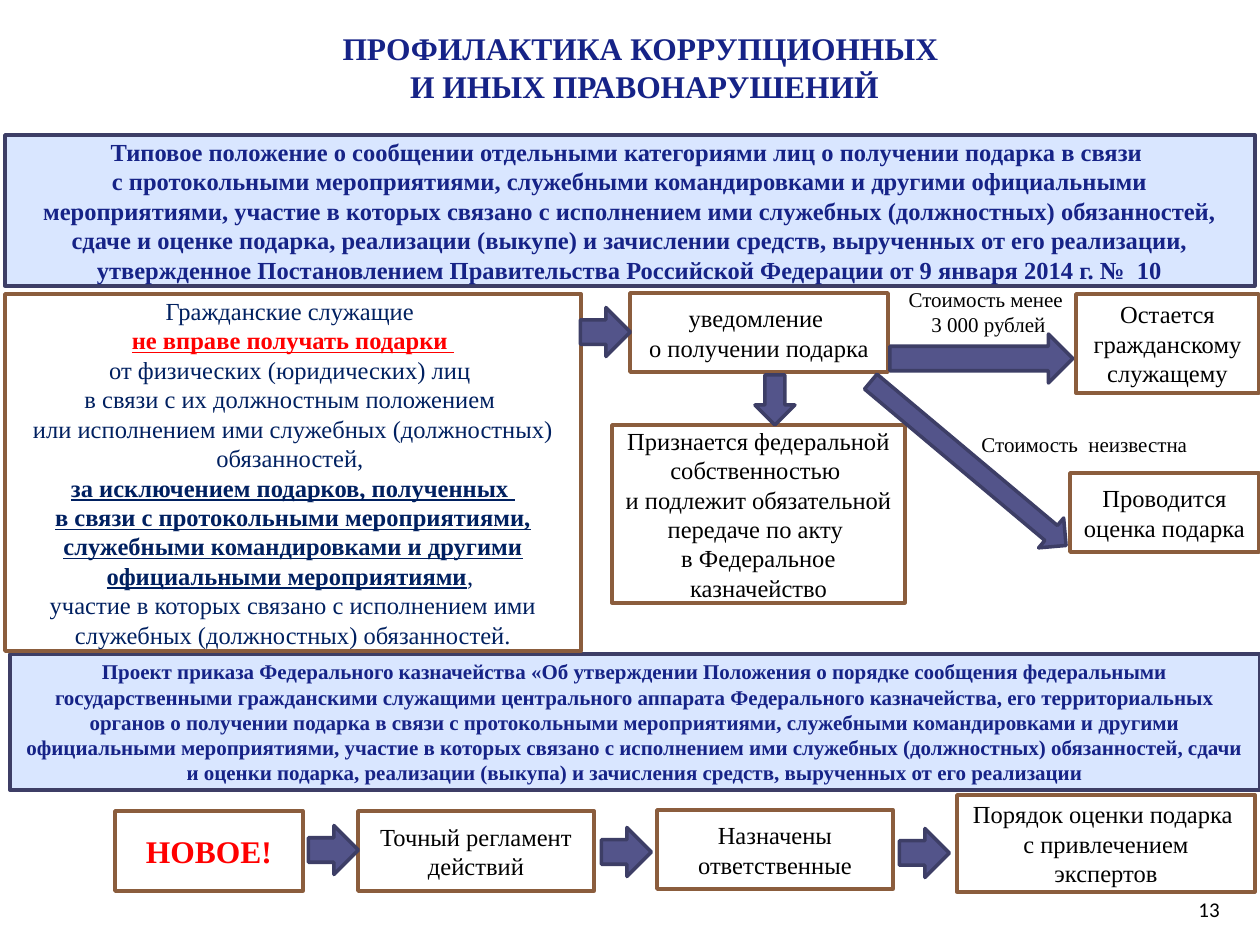
from pptx import Presentation
from pptx import util as u
from pptx.dml.color import RGBColor
from pptx.enum import shapes, text

PX = 914400 / 126
COLORS = {
    "navy": "162387", "dark blue": "002060", "red": "FF0000", "black": "000000",
    "pale blue": "D9E6FF", "white": "FFFFFF", "brown": "8B5D3D",
    "arrow": "53548A", "arrow edge": "3D3E66",
}


def write(shape, wording, size, color, bold=False, align="CENTER", font="Times New Roman"):
    """Fill the shape with one paragraph; line breaks in the wording stay inside it."""
    shape.text_frame.word_wrap = True
    paragraph = shape.text_frame.paragraphs[0]
    paragraph.text = wording.replace("\n", "\v")
    paragraph.alignment = getattr(text.PP_ALIGN, align)
    paragraph.font.name = font
    paragraph.font.size = u.Pt(size)
    paragraph.font.bold = bold
    paragraph.font.color.rgb = RGBColor.from_string(COLORS[color])
    return paragraph


def add_block(kind, frame, fill, line):
    shape = slide.shapes.add_shape(kind, *[round(n * PX) for n in frame])
    shape.shadow.inherit = False
    shape.fill.solid()
    shape.fill.fore_color.rgb = RGBColor.from_string(COLORS[fill])
    shape.line.color.rgb = RGBColor.from_string(COLORS[line])
    shape.line.width = u.Pt(2)
    return shape


presentation = Presentation()
presentation.slide_width = round(1260 * PX)
presentation.slide_height = round(945 * PX)
slide = presentation.slides.add_slide(presentation.slide_layouts[6])

# Blue banners: frame, size, wording
banners = [
    ((5, 135, 1250, 151), 14,
     "Типовое положение о сообщении отдельными категориями лиц о получении подарка в связи \n"
     "с протокольными мероприятиями, служебными командировками и другими официальными "
     "мероприятиями, участие в которых связано с исполнением ими служебных (должностных) "
     "обязанностей, сдаче и оценке подарка, реализации (выкупе) и зачислении средств, "
     "вырученных от его реализации, утвержденное Постановлением Правительства Российской "
     "Федерации от 9 января 2014 г. №  10"),
    ((10, 654, 1250, 136), 12,
     "Проект приказа Федерального казначейства «Об утверждении Положения о порядке сообщения "
     "федеральными государственными гражданскими служащими центрального аппарата Федерального "
     "казначейства, его территориальных органов о получении подарка в связи с протокольными "
     "мероприятиями, служебными командировками и другими официальными мероприятиями, участие "
     "в которых связано с исполнением ими служебных (должностных) обязанностей, сдачи и оценки "
     "подарка, реализации (выкупа) и зачисления средств, вырученных от его реализации"),
]
for frame, size, wording in banners:
    banner = add_block(shapes.MSO_SHAPE.RECTANGLE, frame, "pale blue", "arrow edge")
    write(banner, wording, size, "navy", bold=True)

# Rule for civil servants, with emphasised parts: wording, colour, emphasis
rule_parts = [
    ("Гражданские служащие \n", "dark blue", False),
    ("не вправе получать подарки \n", "red", True),
    ("от физических (юридических) лиц \nв связи с их должностным положением \n"
     "или исполнением ими служебных (должностных) обязанностей, \n", "dark blue", False),
    ("за исключением подарков, полученных \nв связи с протокольными мероприятиями, "
     "служебными командировками и другими официальными мероприятиями", "dark blue", True),
    (", \nучастие в которых связано с исполнением ими служебных (должностных) обязанностей.",
     "dark blue", False),
]
rule_box = add_block(shapes.MSO_SHAPE.RECTANGLE, (5, 294, 576, 357), "white", "brown")
rule = write(rule_box, "", 14, "dark blue")
for wording, color, emphasis in rule_parts:
    for number, line in enumerate(wording.split("\n")):
        if number:
            rule.add_line_break()
        if line:
            run = rule.add_run()
            run.text = line
            run.font.color.rgb = RGBColor.from_string(COLORS[color])
            run.font.bold = run.font.underline = emphasis

# Steps of the two flows
steps = [
    ((612, 425, 293, 178), "Признается федеральной собственностью \n"
     "и подлежит обязательной передаче по акту \nв Федеральное казначейство"),
    ((630, 293, 258, 79), "уведомление \nо получении подарка"),
    ((1076, 294, 183, 99), "Остается гражданскому служащему"),
    ((1070, 473, 189, 79), "Проводится оценка подарка"),
    ((358, 811, 236, 80), "Точный регламент действий"),
    ((657, 810, 236, 79), "Назначены ответственные"),
    ((957, 795, 298, 97), "Порядок оценки подарка \nс привлечением экспертов"),
]
for frame, wording in steps:
    step = add_block(shapes.MSO_SHAPE.RECTANGLE, frame, "white", "brown")
    write(step, wording, 14, "black")
new_box = add_block(shapes.MSO_SHAPE.RECTANGLE, (115, 811, 188, 80), "white", "brown")
write(new_box, "НОВОЕ!", 18, "red", bold=True)

# Arrows: frame before turning, rotation
arrows = [
    ((581, 307, 49, 50), 270),
    ((755, 375, 40, 50), 0),
    ((949, 336, 39, 255), 310),
    ((957, 267, 49, 183), 270),
    ((309, 825, 49, 50), 270),
    ((602, 827, 49, 50), 270),
    ((900, 828, 49, 50), 270),
]
for frame, rotation in arrows:
    arrow = add_block(shapes.MSO_SHAPE.DOWN_ARROW, frame, "arrow", "arrow edge")
    arrow.rotation = rotation

# Plain text: frame, wording, size, colour, bold, alignment, font
labels = [
    ((79, 23, 1131, 78), "ПРОФИЛАКТИКА КОРРУПЦИОННЫХ \nИ ИНЫХ ПРАВОНАРУШЕНИЙ",
     18, "navy", True, "CENTER", "Times New Roman"),
    ((866, 280, 245, 63), "Стоимость менее \n3 000 рублей",
     12, "black", False, "CENTER", "Times New Roman"),
    ((969, 425, 233, 38), "Стоимость  неизвестна",
     12, "black", False, "LEFT", "Times New Roman"),
    ((939, 890, 293, 38), "13", 12, "black", False, "RIGHT", "Calibri"),
]
for frame, *style in labels:
    label = slide.shapes.add_textbox(*[round(n * PX) for n in frame])
    write(label, *style)

presentation.save("out.pptx")
